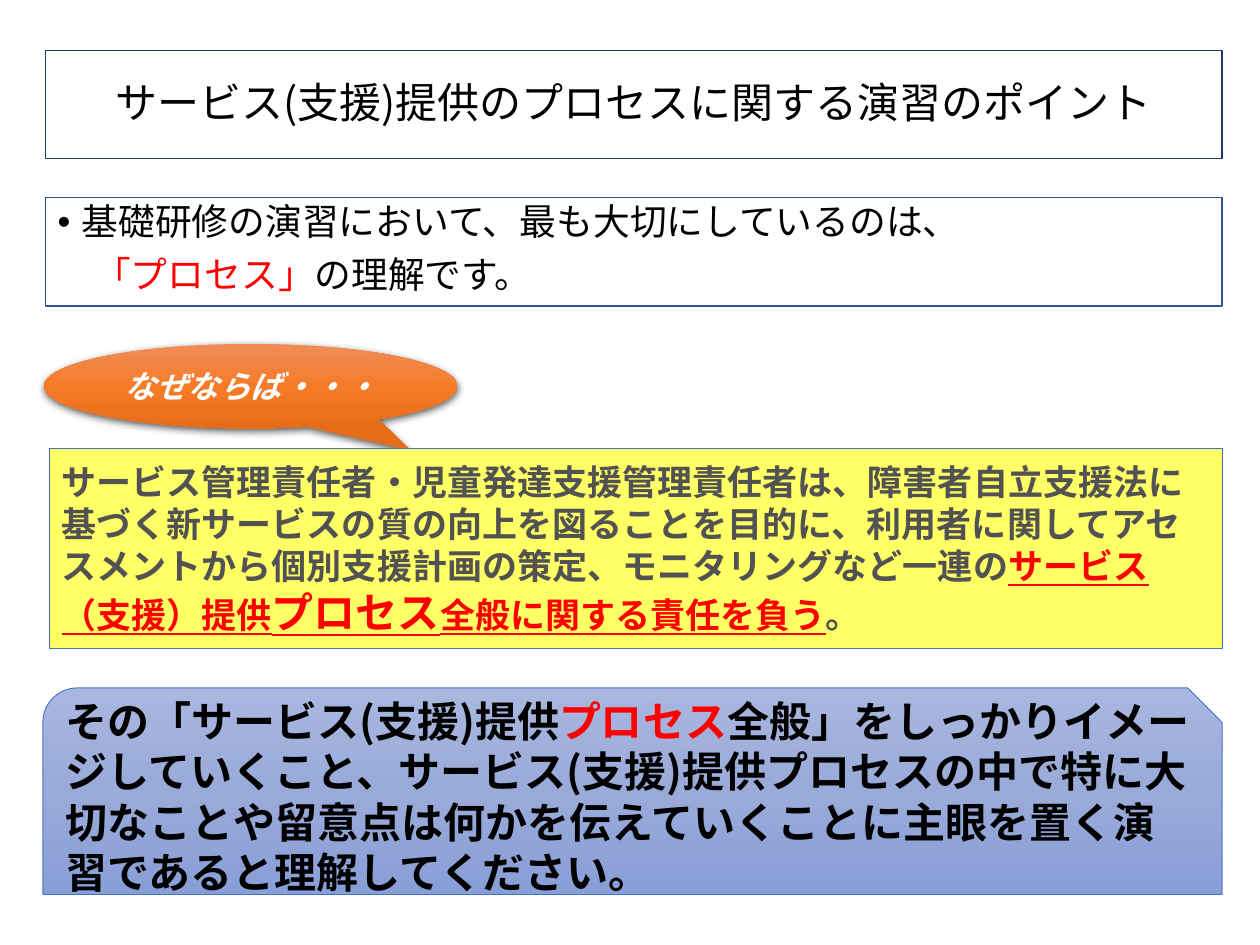
from copy import deepcopy

from lxml.etree import SubElement
from pptx import Presentation
from pptx.dml.color import RGBColor
from pptx.enum.shapes import MSO_SHAPE as Shape
from pptx.enum.text import MSO_ANCHOR as Anchor, PP_ALIGN as Align
from pptx.oxml.ns import qn
from pptx.util import Emu, Inches, Pt

FONT = "Noto Sans CJK JP"
SLIDE_WIDTH, SLIDE_HEIGHT = 10, 7.5
RIGHT_EDGE = 0.97 * SLIDE_WIDTH
COLORS = {
    "black": "000000", "white": "FFFFFF", "red": "FF0000", "gray": "525252",
    "navy": "203864", "blue": "2F5597", "sky": "4472C4", "yellow": "FFFF66",
}
ORANGE_FADE = ["F18C57", "F67B28", "E56C19"]
BLUE_FADE = ["A8B7DF", "9AABD9", "889ED7"]

# A span is (text, size, colour, styles); a paragraph is a list of spans.
TITLE = [[("サービス(支援)提供のプロセスに関する演習のポイント", 24, "black", "")]]
POINT = [
    [("基礎研修の演習において、最も大切にしているのは、", 21, "black", "")],
    [("「プロセス」", 21, "red", ""), ("の理解です。", 21, "black", "")],
]
BECAUSE = [[("なぜならば・・・", 18, "white", "bi")]]
DUTY = [[
    ("サービス管理責任者・児童発達支援管理責任者は、障害者自立支援法に基づく"
     "新サービスの質の向上を図ることを目的に、利用者に関してアセスメントから"
     "個別支援計画の策定、モニタリングなど一連の", 20, "gray", "b"),
    ("サービス（支援）提供", 20, "red", "bu"),
    ("プロセス", 24, "red", "bu"),
    ("全般に関する責任を負う", 20, "red", "bu"),
    ("。", 20, "gray", "b"),
]]
SUMMARY = [[
    ("その「サービス(支援)提供", 24, "black", "b"),
    ("プロセス", 24, "red", "b"),
    ("全般」をしっかりイメージしていくこと、サービス(支援)提供プロセスの中で"
     "特に大切なことや留意点は何かを伝えていくことに主眼を置く演習であると"
     "理解してください。", 24, "black", "b"),
]]


def rgb(name):
    return RGBColor.from_string(COLORS.get(name, name))


def fade(box, colors):
    """Fill from top to bottom with evenly spaced colour stops."""
    box.fill.gradient()
    box.fill.gradient_angle = 270
    stop_list = box.fill._xPr.find(".//" + qn("a:gsLst"))
    while len(stop_list) < len(colors):
        stop_list.append(deepcopy(stop_list[0]))
    for index, stop in enumerate(box.fill.gradient_stops):
        stop.position = index / (len(colors) - 1)
        stop.color.rgb = rgb(colors[index])


def drop_shadow(box):
    effects = box._element.spPr.find(qn("a:effectLst"))
    shadow = SubElement(effects, qn("a:outerShdw"), blurRad=str(Pt(4.5)),
                        dist=str(Pt(1.5)), dir="5400000", rotWithShape="0")
    color = SubElement(shadow, qn("a:srgbClr"), val=COLORS["black"])
    SubElement(color, qn("a:alpha"), val="63000")


def write(box, paragraphs, align, anchor):
    frame = box.text_frame
    frame.word_wrap = True
    frame.vertical_anchor = anchor
    for index, spans in enumerate(paragraphs):
        para = frame.add_paragraph() if index else frame.paragraphs[0]
        para.alignment = align
        for text, size, color, styles in spans:
            span = para.add_run()
            span.text = text
            font = span.font
            font.name, font.size = FONT, Pt(size)
            font.color.rgb = rgb(color)
            font.bold, font.italic = "b" in styles, "i" in styles
            font.underline = "u" in styles
            SubElement(font._element, qn("a:ea"), typeface=FONT)


def add_box(page, kind, left, top, height, paragraphs, right=RIGHT_EDGE, fill=None,
            line=None, weight=0.75, align=Align.LEFT, anchor=Anchor.MIDDLE):
    box = page.shapes.add_shape(kind, Inches(left), Inches(top),
                                Inches(right - left), Inches(height))
    box.shadow.inherit = False
    if isinstance(fill, list):
        fade(box, fill)
    elif fill:
        box.fill.solid()
        box.fill.fore_color.rgb = rgb(fill)
    else:
        box.fill.background()
    if line:
        box.line.color.rgb = rgb(line)
        box.line.width = Pt(weight)
    else:
        box.line.fill.background()
    write(box, paragraphs, align, anchor)
    return box


def indent(para, left, first=0, bullet=None):
    props = para._p.get_or_add_pPr()
    props.set("marL", str(Inches(left)))
    props.set("indent", str(Inches(first)))
    if bullet:
        SubElement(props, qn("a:buFont"), typeface="Arial")
        SubElement(props, qn("a:buChar"), char=bullet)


def main():
    deck = Presentation()
    deck.slide_width, deck.slide_height = Inches(SLIDE_WIDTH), Inches(SLIDE_HEIGHT)
    page = deck.slides.add_slide(deck.slide_layouts[6])

    title = add_box(page, Shape.RECTANGLE, 0.36, 0.4, 0.86, TITLE,
                    line="navy", align=Align.CENTER)
    title.text_frame.paragraphs[0].line_spacing = 0.9

    point = add_box(page, Shape.RECTANGLE, 0.36, 1.57, 0.86, POINT,
                    line="blue", anchor=Anchor.TOP)
    lead, answer = point.text_frame.paragraphs
    for para in (lead, answer):
        para.line_spacing, para.space_before = 0.9, Pt(7.5)
    indent(lead, 0.19, -0.19, "•")
    indent(answer, 0.29)

    callout = add_box(page, Shape.OVAL_CALLOUT, 0.35, 2.73, 0.67, BECAUSE,
                      right=3.63, fill=ORANGE_FADE, align=Align.CENTER)
    callout.adjustments[0], callout.adjustments[1] = 0.385, 0.753
    drop_shadow(callout)

    add_box(page, Shape.RECTANGLE, 0.39, 3.56, 1.59, DUTY,
            fill="yellow", line="sky", weight=0.5)
    add_box(page, Shape.SNIP_ROUND_RECTANGLE, 0.34, 5.46, 1.64, SUMMARY,
            fill=BLUE_FADE, line="sky", weight=0.5)
    deck.save("out.pptx")


if __name__ == "__main__":
    main()
